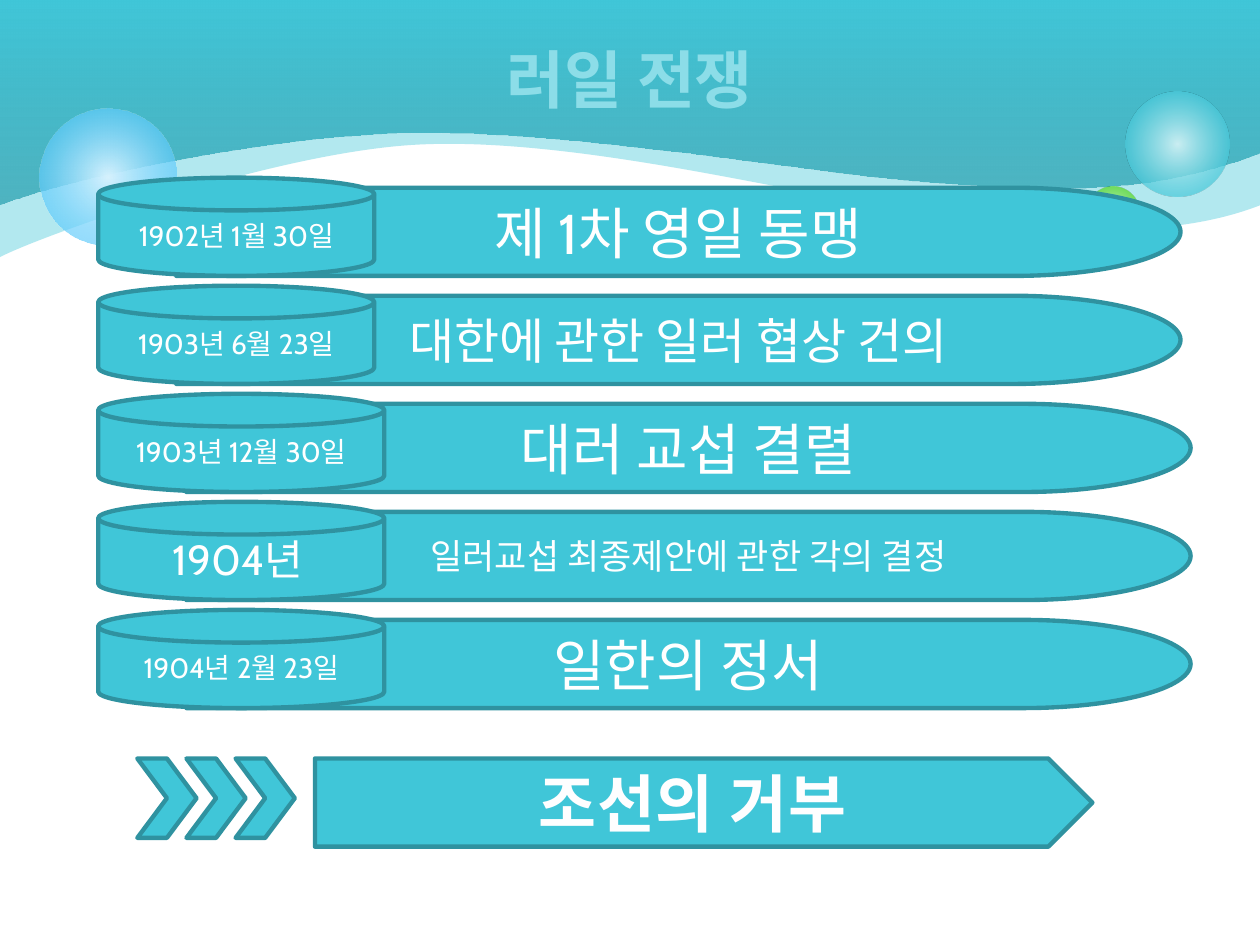
from dataclasses import dataclass

from lxml import etree
from pptx import Presentation
from pptx.dml.color import RGBColor
from pptx.enum import shapes, text
from pptx.oxml import ns
from pptx.util import Inches, Pt


@dataclass(frozen=True)
class Theme:
    """Colours, font and type sizes of the slide."""
    font: str = "Cabin"
    teal: str = "40C6D8"
    deep_teal: str = "249EAE"
    outline: str = "2F92A0"
    white: str = "FFFFFF"
    title_color: str = "8CDDE8"
    banner_color: str = "FEFEFF"
    banner_shadow: str = "B27CE7"
    title_size: int = 36
    date_size: int = 16
    line_width: float = 2.5


THEME = Theme()
SHAPE = shapes.MSO_SHAPE

BACK_WAVE = [
    (0, 2.04), (0.33, 1.87), (2.14, 1.22), (3.28, 1.15), (4.43, 1.08),
    (6.06, 1.48), (6.87, 1.61), (7.68, 1.73), (9.02, 2.01), (10, 1.63),
]
FRONT_WAVE = [
    (0, 1.62), (0.45, 1.44), (2.03, 1.08), (3.26, 1.05), (4.49, 1.02),
    (6.58, 1.39), (7.37, 1.44), (8.16, 1.49), (9.02, 1.59), (10, 1.21),
]
BUBBLES = [
    ((8.93, 0.73, 0.83), [(0, "D9F4F7", 90), (76, THEME.teal, 70)]),
    ((8.62, 1.48, 0.42), [(0, "DAFACD", 90), (76, "4CD416", 70)]),
    ((0.31, 0.86, 1.09), [(0, "D6F2FE", 100), (100, "33BDFB", 54)]),
]
EVENTS = [
    ("1902년 1월 30일", 16, "제 1차 영일 동맹", 32, 2.19),
    ("1903년 6월 23일", 16, "대한에 관한 일러 협상 건의", 28, 2.19),
    ("1903년 12월 30일", 16, "대러 교섭 결렬", 32, 2.27),
    ("1904년 ", 24, "일러교섭 최종제안에 관한 각의 결정", 20, 2.27),
    ("1904년 2월 23일", 16, "일한의 정서", 32, 2.27),
]


def add_color(parent, color, alpha):
    """Append a colour with an opacity in percent."""
    node = etree.SubElement(parent, ns.qn("a:srgbClr"), val=color)
    etree.SubElement(node, ns.qn("a:alpha"), val=str(alpha * 1000))


def paint(shape, stops, angle=None):
    """Fill a shape with one colour, a linear or a radial gradient."""
    shape.shadow.inherit = False
    shape.line.fill.background()
    shape.fill.solid()
    solid = shape.element.spPr.find(ns.qn("a:solidFill"))
    if len(stops) == 1:
        add_color(solid, *stops[0][1:])
        return
    gradient = etree.Element(ns.qn("a:gradFill"), rotWithShape="1")
    stop_list = etree.SubElement(gradient, ns.qn("a:gsLst"))
    for position, color, alpha in stops:
        stop = etree.SubElement(stop_list, ns.qn("a:gs"), pos=str(position * 1000))
        add_color(stop, color, alpha)
    if angle is not None:
        etree.SubElement(gradient, ns.qn("a:lin"), ang=str(angle * 60000), scaled="0")
    else:
        radial = etree.SubElement(gradient, ns.qn("a:path"), path="circle")
        etree.SubElement(radial, ns.qn("a:fillToRect"), l="50000", t="50000", r="50000", b="50000")
    solid.getparent().replace(solid, gradient)


def add_wave(slide, edge, stops, angle=None):
    """Draw a band from the top of the slide down to a smooth wavy edge."""
    points = [(Inches(x), Inches(y)) for x, y in edge + [(10.01, 0)]]
    builder = slide.shapes.build_freeform(0, 0)
    builder.add_line_segments(points, close=True)
    wave = builder.convert_to_shape()
    segments = list(wave.element.iter(ns.qn("a:lnTo")))[1:len(edge)]
    for first in range(0, len(segments), 3):
        cubic = etree.Element(ns.qn("a:cubicBezTo"))
        segments[first].addprevious(cubic)
        for segment in segments[first:first + 3]:
            cubic.append(segment[0])
            segment.getparent().remove(segment)
    paint(wave, stops, angle)


def add_backdrop(slide):
    """Draw the waves and bubbles behind the content."""
    add_wave(slide, BACK_WAVE, [(0, THEME.teal, 40)])
    add_wave(slide, FRONT_WAVE, [(0, THEME.deep_teal, 69), (100, THEME.teal, 100)], 270)
    for (left, top, size), stops in BUBBLES:
        bubble = slide.shapes.add_shape(
            SHAPE.OVAL, Inches(left), Inches(top), Inches(size), Inches(size))
        paint(bubble, stops)


def write(shape, wording, size, color=THEME.white, bold=False):
    """Put centred text into a shape, with any trailing space at date size."""
    frame = shape.text_frame
    frame.text = wording.rstrip()
    frame.word_wrap = True
    frame.vertical_anchor = text.MSO_ANCHOR.MIDDLE
    paragraph = frame.paragraphs[0]
    paragraph.alignment = text.PP_ALIGN.CENTER
    if wording.endswith(" "):
        paragraph.add_run().text = " "
    for run in paragraph.runs:
        run.font.name = THEME.font
        run.font.size = Pt(size if run.text.strip() else THEME.date_size)
        run.font.bold = bold
        run.font.color.rgb = RGBColor.from_string(color)
        latin = run.font._element.find(ns.qn("a:latin"))
        latin.addnext(etree.Element(ns.qn("a:ea"), typeface=THEME.font))


def add_block(parent, kind, left, top, width, height):
    """Add an outlined teal shape."""
    shape = parent.shapes.add_shape(
        kind, Inches(left), Inches(top), Inches(width), Inches(height))
    shape.shadow.inherit = False
    shape.fill.solid()
    shape.fill.fore_color.rgb = RGBColor.from_string(THEME.teal)
    shape.line.color.rgb = RGBColor.from_string(THEME.outline)
    shape.line.width = Pt(THEME.line_width)
    return shape


def add_title(slide, left, top, width, height):
    """Place the title placeholder in front of the backdrop."""
    title = slide.shapes.title
    title.left, title.top = Inches(left), Inches(top)
    title.width, title.height = Inches(width), Inches(height)
    write(title, "러일 전쟁", THEME.title_size, THEME.title_color, True)
    title.element.getparent().append(title.element)


def add_timeline(slide, left, top, last_top):
    """Draw one dated disk and one event bar per row."""
    step = (last_top - top) / (len(EVENTS) - 1)
    for row, (date, date_size, event, event_size, disk_width) in enumerate(EVENTS):
        y = top + row * step
        bar = add_block(slide, SHAPE.FLOWCHART_STORED_DATA,
                        left + disk_width - 1.57, y + 0.08, 7.97, 0.7)
        bar.element.spPr.find(ns.qn("a:xfrm")).set("flipH", "1")
        write(bar, event, event_size)
        disk = add_block(slide, SHAPE.FLOWCHART_MAGNETIC_DISK, left, y, disk_width, 0.78)
        write(disk, date, date_size)


def add_conclusion(slide, left, top):
    """Draw three chevrons leading to the closing banner."""
    group = slide.shapes.add_group_shape()
    for index in range(3):
        add_block(group, SHAPE.CHEVRON, left + index * 0.39, top, 0.47, 0.63)
    banner = add_block(group, SHAPE.PENTAGON, left + 1.41, top, 6.17, 0.7)
    write(banner, "조선의 거부", THEME.title_size, THEME.banner_color, True)
    properties = banner.text_frame.paragraphs[0].runs[0].font._element
    properties.set("spc", "50")
    effects = etree.Element(ns.qn("a:effectLst"))
    shadow = etree.SubElement(effects, ns.qn("a:outerShdw"), blurRad="38100", dist="12700", dir="2700000")
    add_color(shadow, THEME.banner_shadow, 60)
    properties.find(ns.qn("a:solidFill")).addnext(effects)


def main():
    """Build and save the presentation."""
    presentation = Presentation()
    presentation.slide_width, presentation.slide_height = Inches(10), Inches(7.5)
    slide = presentation.slides.add_slide(presentation.slide_layouts[5])
    add_backdrop(slide)
    add_title(slide, 0.5, 0, 9, 1.25)
    add_timeline(slide, 0.78, 1.41, 4.84)
    add_conclusion(slide, 1.09, 6.02)
    presentation.save("out.pptx")


if __name__ == "__main__":
    main()
